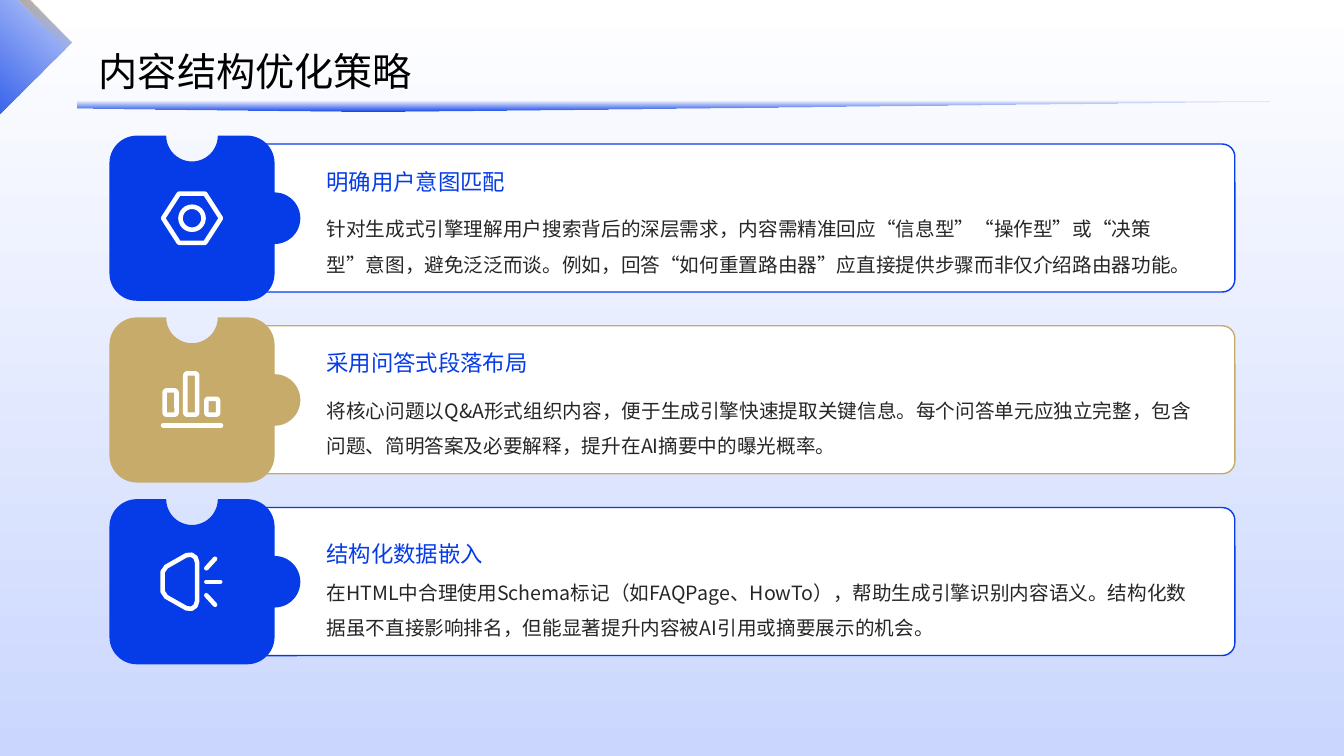
import math
from dataclasses import dataclass
from typing import Callable

import lxml.etree
import pptx
import pptx.dml.color
import pptx.enum.shapes
import pptx.enum.text
import pptx.oxml.ns
import pptx.util

Cm = pptx.util.Cm
Preset = pptx.enum.shapes.MSO_SHAPE
Point = tuple[float, float]

COLORS = {"blue": "063CE8", "gold": "C6AB6A", "white": "FFFFFF",
          "sky": "CAD6FE", "body": "262626", "black": "000000"}
FONT = "Noto Sans CJK SC"
TILE_X, FIRST_Y, ROW_PITCH = 4.84, 5.5, 4.58
TILE_HALF, CORNER_RADIUS, KNOB_RADIUS = 2.08, 0.69, 0.65
TEXT_LEFT, TEXT_WIDTH = 8.23, 22.17
ICON_STROKE = 3.25


def rgb(name: str) -> pptx.dml.color.RGBColor:
    return pptx.dml.color.RGBColor.from_string(COLORS[name])


def sub_element(parent, tag: str):
    return lxml.etree.SubElement(parent, pptx.oxml.ns.qn(tag))


# Formatting
def write_text(shape, text: str, *, size: float, color: str, spacing: float = 1.5,
               anchor=pptx.enum.text.MSO_ANCHOR.TOP) -> None:
    frame = shape.text_frame
    frame.word_wrap = True
    frame.auto_size = pptx.enum.text.MSO_AUTO_SIZE.NONE
    frame.vertical_anchor = anchor
    frame.margin_left = frame.margin_right = frame.margin_top = frame.margin_bottom = 0
    paragraph = frame.paragraphs[0]
    paragraph.alignment = pptx.enum.text.PP_ALIGN.LEFT
    paragraph.line_spacing = spacing
    run = paragraph.add_run()
    run.text = text
    run.font.size = pptx.util.Pt(size)
    run.font.name = FONT
    run.font.color.rgb = rgb(color)
    properties = run.font._element
    properties.set("lang", "zh-CN")
    sub_element(properties, "a:ea").set("typeface", FONT)


def set_gradient(fill, start: str, end: str, angle: float) -> None:
    fill.gradient()
    fill.gradient_angle = angle
    for stop, color, position in zip(fill.gradient_stops, (start, end), (0, 1)):
        stop.color.rgb = rgb(color)
        stop.position = position


def fade(shape, color: str, angle: float) -> None:
    shape.shadow.inherit = False
    shape.line.fill.background()
    set_gradient(shape.fill, color, color, angle)
    stops = list(shape._element.spPr.iter(pptx.oxml.ns.qn("a:srgbClr")))
    sub_element(stops[-1], "a:alpha").set("val", "0")


def set_style(shape, fill: str | None, line: str | None = None, width: float = 1) -> None:
    shape.shadow.inherit = False
    if fill:
        shape.fill.solid()
        shape.fill.fore_color.rgb = rgb(fill)
    else:
        shape.fill.background()
    if line:
        shape.line.color.rgb = rgb(line)
        shape.line.width = pptx.util.Pt(width)
    else:
        shape.line.fill.background()


def round_stroke(shape) -> None:
    line = shape._element.spPr.find(pptx.oxml.ns.qn("a:ln"))
    line.set("cap", "rnd")
    sub_element(line, "a:round")


# Drawing
def add_preset(slide, kind, left: float, top: float, width: float, height: float):
    return slide.shapes.add_shape(kind, Cm(left), Cm(top), Cm(width), Cm(height))


def add_polygon(slide, points: list[Point]):
    corners = [(Cm(x), Cm(y)) for x, y in points]
    builder = slide.shapes.build_freeform(*corners[0], scale=1.0)
    builder.add_line_segments(corners[1:], close=True)
    return builder.convert_to_shape()


def add_text(slide, left: float, top: float, height: float, text: str, **text_format) -> None:
    box = slide.shapes.add_textbox(Cm(left), Cm(top), Cm(TEXT_WIDTH), Cm(height))
    write_text(box, text, **text_format)


def arc(x: float, y: float, radius: float, start: int, end: int) -> list[Point]:
    angles = [math.radians(start + (end - start) * step / 24) for step in range(25)]
    return [(x + radius * math.cos(angle), y + radius * math.sin(angle)) for angle in angles]


def add_tile(slide, y: float, color: str) -> None:
    x, inner = TILE_X, TILE_HALF - CORNER_RADIUS
    points = (arc(x, y - TILE_HALF, KNOB_RADIUS, 180, 0)
              + arc(x + inner, y - inner, CORNER_RADIUS, -90, 0)
              + arc(x + TILE_HALF, y, KNOB_RADIUS, -90, 90)
              + arc(x + inner, y + inner, CORNER_RADIUS, 0, 90)
              + arc(x - inner, y + inner, CORNER_RADIUS, 90, 180)
              + arc(x - inner, y - inner, CORNER_RADIUS, 180, 270))
    set_style(add_polygon(slide, points), color)


def add_stroke(slide, y: float, start: Point, end: Point) -> None:
    connector = slide.shapes.add_connector(
        pptx.enum.shapes.MSO_CONNECTOR.STRAIGHT, Cm(TILE_X + start[0]), Cm(y + start[1]),
        Cm(TILE_X + end[0]), Cm(y + end[1]))
    connector.line.color.rgb = rgb("white")
    connector.line.width = pptx.util.Pt(ICON_STROKE)
    round_stroke(connector)
    sub_element(connector._element.spPr, "a:effectLst")


def add_outline(slide, y: float, points: list[Point]) -> None:
    shape = add_polygon(slide, [(TILE_X + dx, y + dy) for dx, dy in points])
    set_style(shape, None, "white", ICON_STROKE)
    round_stroke(shape)


# Icons, placed around the middle of their tile
def add_nut_icon(slide, y: float) -> None:
    add_outline(slide, y, [(-0.33, -0.62), (0.33, -0.62), (0.73, 0),
                           (0.33, 0.62), (-0.33, 0.62), (-0.73, 0)])
    hole = add_preset(slide, Preset.OVAL, TILE_X - 0.29, y - 0.29, 0.58, 0.58)
    set_style(hole, None, "white", ICON_STROKE)


def add_bars_icon(slide, y: float) -> None:
    for left, top in ((-0.69, -0.24), (-0.17, -0.67), (0.36, -0.03)):
        bar = add_preset(slide, Preset.ROUNDED_RECTANGLE, TILE_X + left, y + top, 0.3, 0.37 - top)
        set_style(bar, None, "white", ICON_STROKE)
    add_stroke(slide, y, (-0.73, 0.64), (0.73, 0.64))


def add_speaker_icon(slide, y: float) -> None:
    upper = [(-0.74, -0.25), (-0.65, -0.38), (-0.14, -0.67),
             (-0.01, -0.68), (0.09, -0.61), (0.13, -0.48)]
    add_outline(slide, y, upper + [(dx, -dy) for dx, dy in reversed(upper)])
    for side in (-1, 0, 1):
        tip = 0.58 if side else 0.71
        add_stroke(slide, y, (0.36, 0.34 * side), (tip, 0.58 * side))


@dataclass
class Strategy:
    heading: str
    body: str
    color: str
    heading_top: float
    draw_icon: Callable


STRATEGIES = [
    Strategy("明确用户意图匹配",
             "针对生成式引擎理解用户搜索背后的深层需求，内容需精准回应“信息型”“操作型”或“决策型”意图，"
             "避免泛泛而谈。例如，回答“如何重置路由器”应直接提供步骤而非仅介绍路由器功能。",
             "blue", 3.91, add_nut_icon),
    Strategy("采用问答式段落布局",
             "将核心问题以Q&A形式组织内容，便于生成引擎快速提取关键信息。每个问答单元应独立完整，"
             "包含问题、简明答案及必要解释，提升在AI摘要中的曝光概率。",
             "gold", 8.46, add_bars_icon),
    Strategy("结构化数据嵌入",
             "在HTML中合理使用Schema标记（如FAQPage、HowTo），帮助生成引擎识别内容语义。"
             "结构化数据虽不直接影响排名，但能显著提升内容被AI引用或摘要展示的机会。",
             "blue", 13.28, add_speaker_icon),
]


def add_strategy(slide, strategy: Strategy, y: float) -> None:
    card = add_preset(slide, Preset.ROUNDED_RECTANGLE, 6.25, y - 1.87, 24.87, 3.73)
    card.adjustments[0] = 0.085
    set_style(card, "white", strategy.color)
    add_tile(slide, y, strategy.color)
    strategy.draw_icon(slide, y)
    add_text(slide, TEXT_LEFT, strategy.heading_top, 1.07, strategy.heading, size=16, color="blue")
    add_text(slide, TEXT_LEFT, y - 0.32, 1.85, strategy.body, size=14, color="body")


def main() -> None:
    presentation = pptx.Presentation()
    presentation.slide_width, presentation.slide_height = Cm(33.87), Cm(19.05)
    slide = presentation.slides.add_slide(presentation.slide_layouts[5])
    set_gradient(slide.background.fill, "white", "sky", 270)

    # Title
    title = slide.shapes.title
    title.left, title.top, title.width, title.height = Cm(2.49), Cm(0.79), Cm(24.74), Cm(1.65)
    write_text(title, "内容结构优化策略", size=28, color="black", spacing=1.3,
               anchor=pptx.enum.text.MSO_ANCHOR.MIDDLE)

    # Strategy rows
    for index, strategy in enumerate(STRATEGIES):
        add_strategy(slide, strategy, FIRST_Y + index * ROW_PITCH)

    # Corner ornament and title underline
    corner = add_polygon(slide, [(1.12, -1.12), (1.12, 1.53), (-0.08, 2.73),
                                 (-3.48, -0.68), (-3.48, -1.13)])
    fade(corner, "blue", 90)
    ribbon = add_preset(slide, Preset.RECTANGLE, -0.81, -0.03, 3, 0.23)
    fade(ribbon, "gold", 0)
    corner.rotation = ribbon.rotation = 45
    underline = add_polygon(slide, [(1.96, 2.57), (1.96, 2.72), (9.78, 2.8),
                                    (32, 2.59), (32, 2.57)])
    fade(underline, "blue", 90)

    presentation.save("out.pptx")


if __name__ == "__main__":
    main()
